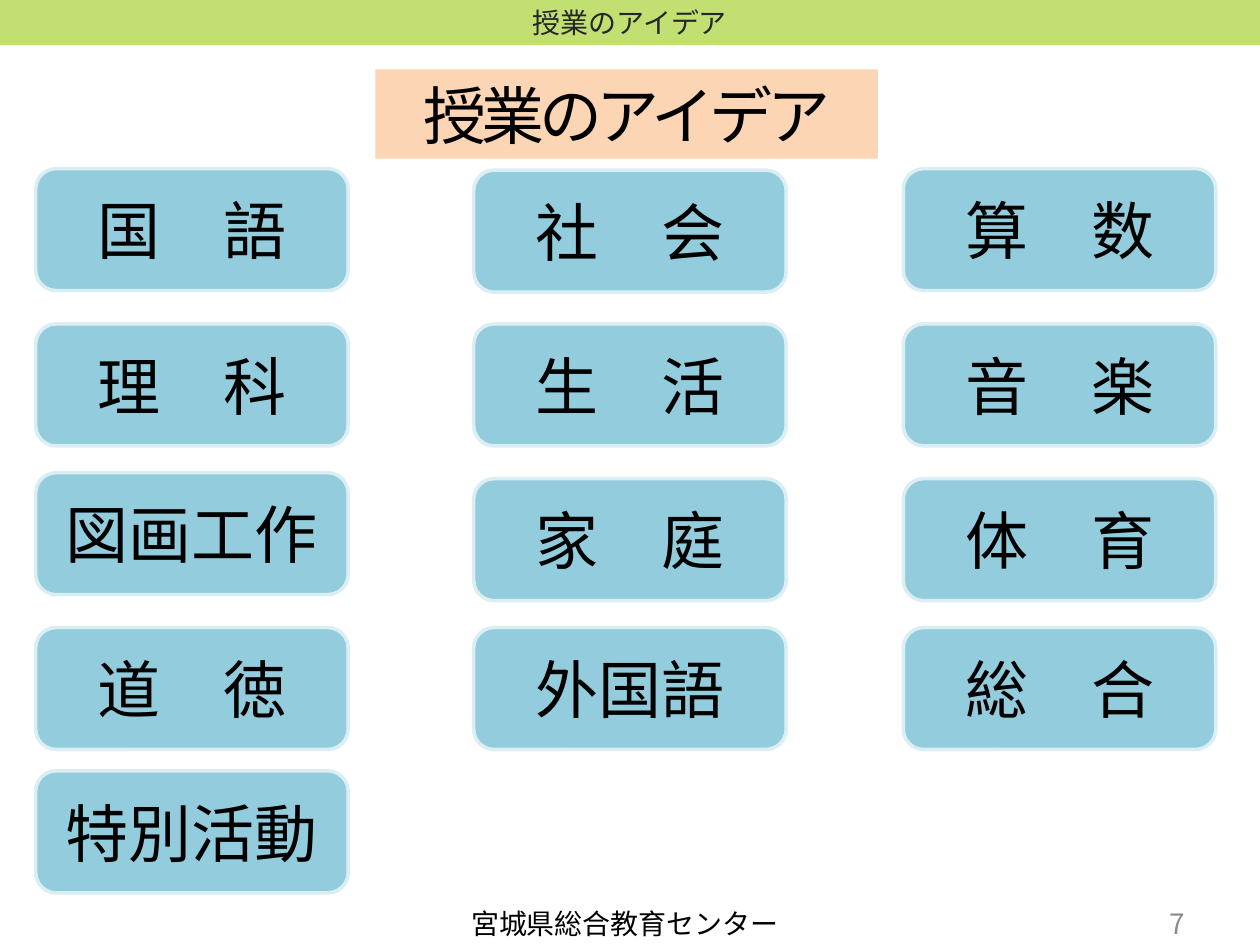
import pptx
import pptx.dml.color
import pptx.enum.shapes
import pptx.enum.text
import pptx.oxml
import pptx.oxml.ns
import pptx.util

Cm = pptx.util.Cm
Pt = pptx.util.Pt
RGBColor = pptx.dml.color.RGBColor
MSO_SHAPE = pptx.enum.shapes.MSO_SHAPE
PP_ALIGN = pptx.enum.text.PP_ALIGN

TOPIC = "授業のアイデア"
FOOTER = "宮城県総合教育センター"
PAGE_NUMBER = "7"

# Each column: left edge, then (top edge, subject), in centimetres
SUBJECT_COLUMNS = [
    (0.72, [(3.4, "国　語"), (6.53, "理　科"), (9.53, "図画工作"),
            (12.65, "道　徳"), (15.54, "特別活動")]),
    (9.55, [(3.43, "社　会"), (6.53, "生　活"), (9.65, "家　庭"), (12.65, "外国語")]),
    (18.21, [(3.4, "算　数"), (6.53, "音　楽"), (9.65, "体　育"), (12.65, "総　合")]),
]
BUTTON_WIDTH, BUTTON_HEIGHT = 6.3, 2.46

FONT = "Noto Sans CJK JP"
BLACK = RGBColor(0x00, 0x00, 0x00)
DARK_GRAY = RGBColor(0x26, 0x26, 0x26)
GRAY = RGBColor(0x8C, 0x8C, 0x8C)
GREEN = RGBColor(0xC2, 0xDF, 0x71)
PEACH = RGBColor(0xFC, 0xD5, 0xB5)
BLUE = RGBColor(0x93, 0xCD, 0xDD)
PALE_BLUE = RGBColor(0xDB, 0xEE, 0xF4)


def write(shape, text, size, color=BLACK, align=PP_ALIGN.CENTER):
    """Put one vertically centred line of text in the shape and return its run."""
    frame = shape.text_frame
    frame.word_wrap = True
    frame.vertical_anchor = pptx.enum.text.MSO_ANCHOR.MIDDLE
    frame.margin_top = frame.margin_bottom = 0
    paragraph = frame.paragraphs[0]
    paragraph.alignment = align
    run = paragraph.add_run()
    run.text = text
    run.font.size = Pt(size)
    run.font.name = FONT
    run.font.color.rgb = color
    east_asian = pptx.oxml.parse_xml(
        f'<a:ea {pptx.oxml.ns.nsdecls("a")} typeface="{FONT}"/>')
    run.font._element.find(pptx.oxml.ns.qn("a:latin")).addnext(east_asian)
    return run


def add_box(slide, kind, left, top, width, height, fill, line=None):
    shape = slide.shapes.add_shape(kind, Cm(left), Cm(top), Cm(width), Cm(height))
    shape.shadow.inherit = False
    shape.fill.solid()
    shape.fill.fore_color.rgb = fill
    if line is None:
        shape.line.fill.background()
    else:
        shape.line.color.rgb = line
        shape.line.width = Pt(2)
    return shape


def main():
    presentation = pptx.Presentation()
    presentation.slide_width = Cm(25.4)
    presentation.slide_height = Cm(19.05)
    slide = presentation.slides.add_slide(presentation.slide_layouts[6])

    header = add_box(slide, MSO_SHAPE.RECTANGLE, 0, 0, 25.4, 0.91, GREEN)
    write(header, TOPIC, 16, DARK_GRAY)

    footer = slide.shapes.add_textbox(Cm(9.25), Cm(18.14), Cm(6.91), Cm(0.94))
    write(footer, FOOTER, 16, align=PP_ALIGN.LEFT)
    number = slide.shapes.add_textbox(Cm(18.21), Cm(18.11), Cm(5.92), Cm(1.02))
    write(number, PAGE_NUMBER, 16, GRAY, PP_ALIGN.RIGHT)

    for left, subjects in SUBJECT_COLUMNS:
        for top, subject in subjects:
            button = add_box(slide, MSO_SHAPE.ROUNDED_RECTANGLE, left, top,
                             BUTTON_WIDTH, BUTTON_HEIGHT, BLUE, PALE_BLUE)
            write(button, subject, 36)

    title = add_box(slide, MSO_SHAPE.RECTANGLE, 7.57, 1.4, 10.13, 1.8, PEACH)
    title_run = write(title, TOPIC, 36)
    title_run.font._element.set("spc", "-300")

    presentation.save("out.pptx")


if __name__ == "__main__":
    main()
